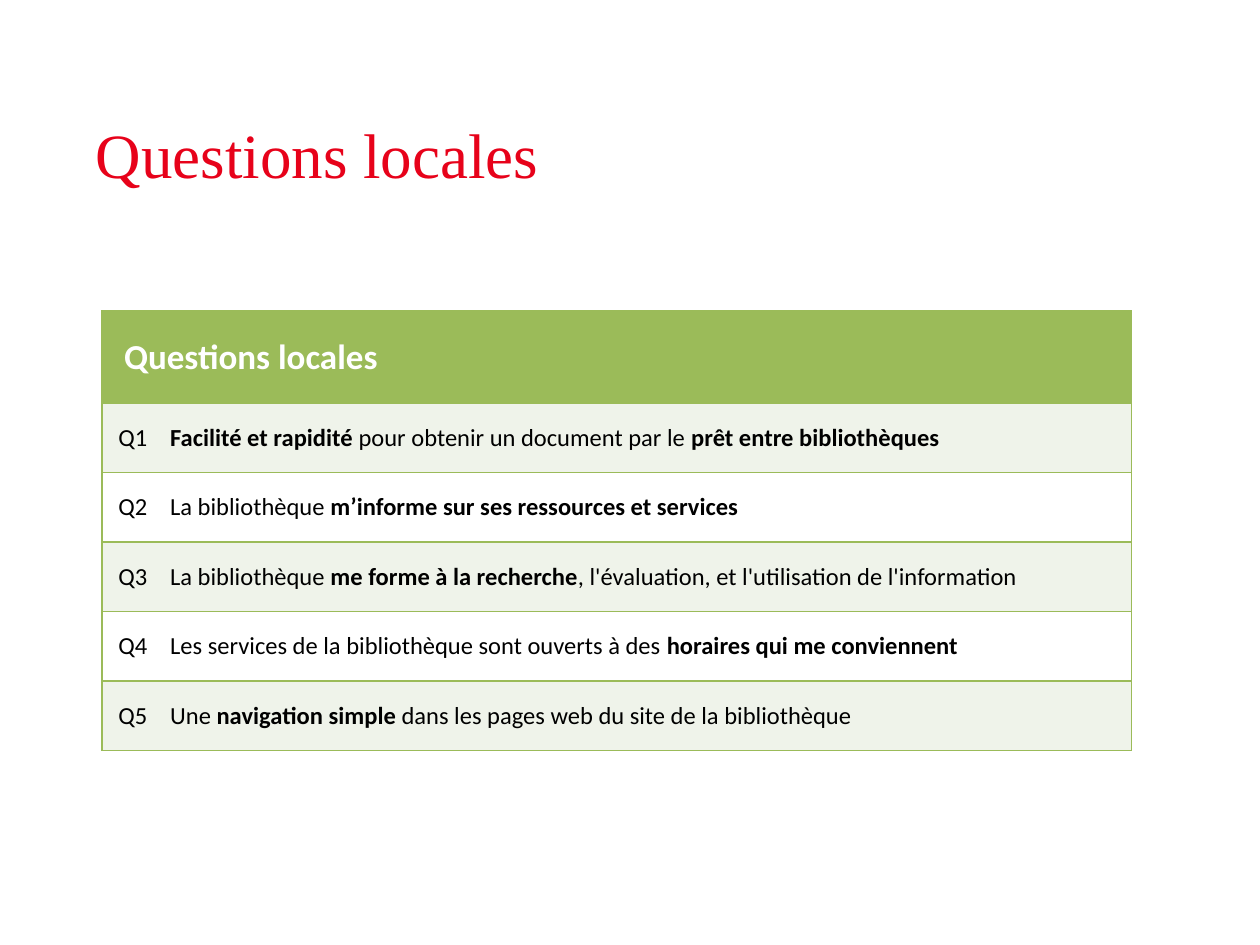
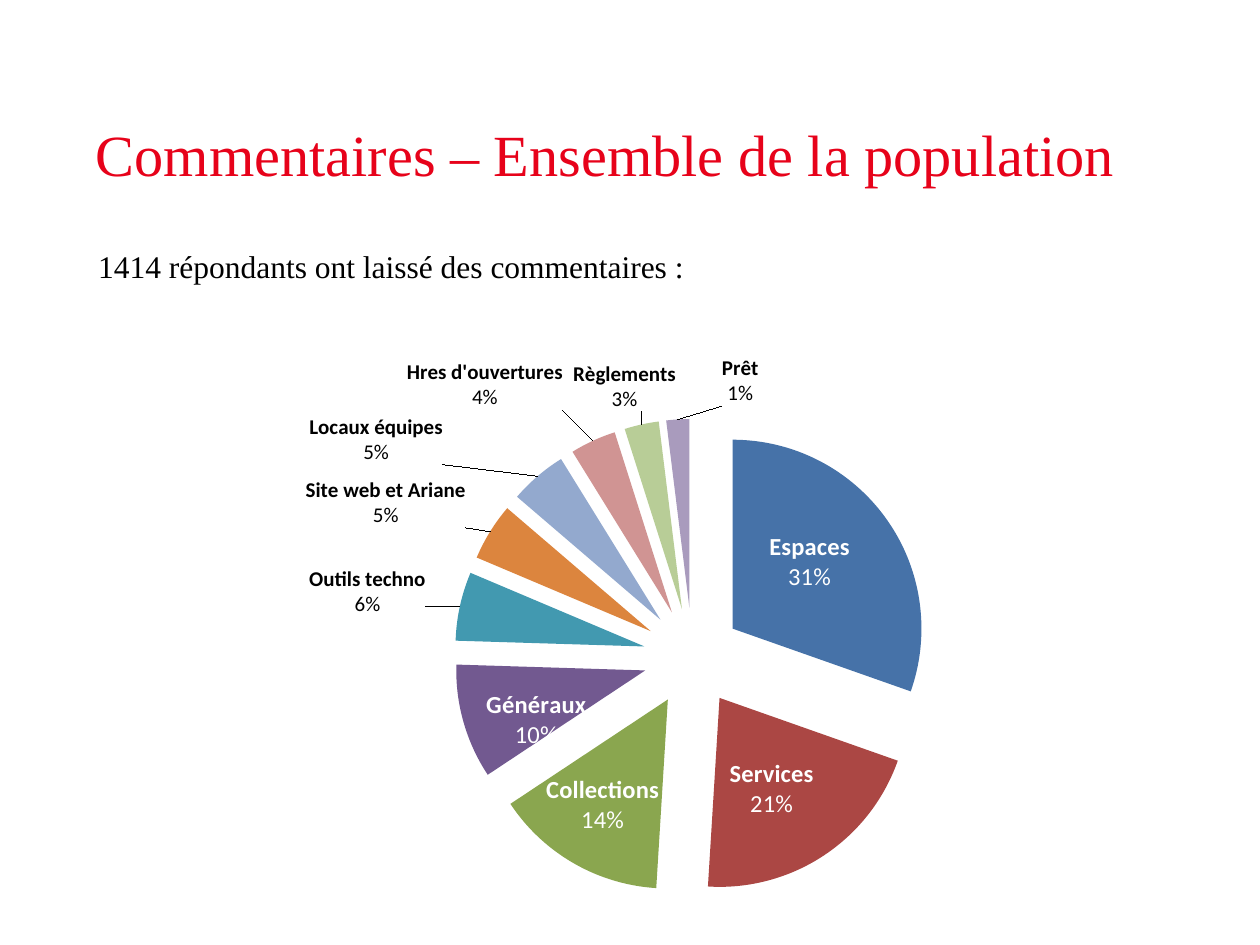
from lxml import etree
from pptx import Presentation
from pptx.chart.data import CategoryChartData
from pptx.dml.color import RGBColor
from pptx.enum.chart import XL_CHART_TYPE, XL_LABEL_POSITION
from pptx.enum.text import MSO_ANCHOR, MSO_AUTO_SIZE, PP_ALIGN
from pptx.oxml.ns import qn
from pptx.util import Cm, Pt

PIE = XL_CHART_TYPE.PIE
INSIDE, OUTSIDE = XL_LABEL_POSITION.CENTER, XL_LABEL_POSITION.OUTSIDE_END
MIDDLE, TOP = MSO_ANCHOR.MIDDLE, MSO_ANCHOR.TOP
LEFT, CENTER = PP_ALIGN.LEFT, PP_ALIGN.CENTER
NO_FIT = MSO_AUTO_SIZE.NONE

SERIF, SANS = "Times New Roman", "Calibri"
RED, GREEN, PALE, WHITE, BLACK = "E7021A", "9BBB59", "EFF3EA", "FFFFFF", "000000"
TITLE_BOX = (1.68, 2.08, 22.4, 2.39)
TABLE_BOX = (2.06, 6.27, 20.75, 8.86)
INTRO_BOX = (1.73, 4.85, 19, 1.5)
CHART_BOX = (4.09, 6.96, 18.11, 12.09)
CODE_WIDTH, HEADER_HEIGHT = 1.24, 1.86
EXPLOSION = 26
PLOT_LAYOUT = {"x": 0.28, "y": 0.12, "w": 0.53, "h": 0.8}

QUESTIONS = [
    [("Facilité et rapidité ", True), ("pour obtenir un document par le ", False),
     ("prêt entre bibliothèques", True)],
    [("La bibliothèque ", False), ("m’informe sur ses ressources et services", True)],
    [("La bibliothèque ", False), ("me forme à la recherche", True),
     (", l'évaluation, et l'utilisation de l'information", False)],
    [("Les services de la bibliothèque sont ouverts à des ", False),
     ("horaires qui me conviennent", True)],
    [("Une ", False), ("navigation simple ", True),
     ("dans les pages web du site de la bibliothèque", False)],
]

TOPICS = [
    ("Espaces", 31, "31%", "4672A8", INSIDE, (0, -0.02)),
    ("Services", 21, "21%", "AB4744", INSIDE, (0, 0.02)),
    ("Collections", 15, "14%", "8AA64F", INSIDE, (-0.02, 0.04)),
    ("Généraux", 10, "10%", "725990", INSIDE, (-0.02, 0.04)),
    ("Outils techno", 6, "6%", "4299B0", OUTSIDE, (-0.03, 0.02)),
    ("Site web et Ariane", 5, "5%", "DC853E", OUTSIDE, (-0.02, 0)),
    ("Locaux équipes", 5, "5%", "93A9CE", OUTSIDE, (-0.1, -0.01)),
    ("Hres d'ouvertures", 4, "4%", "D09493", OUTSIDE, (-0.03, -0.04)),
    ("Règlements", 3, "3%", "B8CD97", OUTSIDE, (0.04, -0.01)),
    ("Prêt", 2, "1%", "A99BBD", OUTSIDE, (0.07, -0.01)),
]


def paint(target, color):
    """Give a fill or a font a solid colour."""
    if hasattr(target, "solid"):
        target.solid()
        target.fore_color.rgb = RGBColor.from_string(color)
    else:
        target.color.rgb = RGBColor.from_string(color)


def assign(target, **values):
    """Set several attributes on one object."""
    for key, value in values.items():
        setattr(target, key, value)


def write(paragraph, pieces, size, font, color, align=LEFT):
    """Write (text, bold) pieces into a paragraph."""
    paragraph.alignment = align
    for text, bold in pieces:
        run = paragraph.add_run()
        run.text = text
        assign(run.font, size=Pt(size), name=font, bold=bold)
        paint(run.font, color)


def add_titled_slide(deck, title, size):
    """Add a title-only slide with the shared red title."""
    slide = deck.slides.add_slide(deck.slide_layouts[5])
    heading = slide.shapes.title
    left, top, width, height = map(Cm, TITLE_BOX)
    assign(heading, left=left, top=top, width=width, height=height)
    assign(heading.text_frame, word_wrap=True, auto_size=NO_FIT, vertical_anchor=MIDDLE,
           margin_bottom=Cm(0.5))
    write(heading.text_frame.paragraphs[0], [(title, False)], size, SERIF, RED)
    return slide


def style_cell(cell, color, lined_sides):
    """Fill a cell and rule the given sides, leaving the others bare."""
    properties = cell._tc.get_or_add_tcPr()
    for side in "LRTB":
        line = etree.SubElement(properties, qn(f"a:ln{side}"), w=str(Pt(1)))
        if side in lined_sides:
            fill = etree.SubElement(line, qn("a:solidFill"))
            etree.SubElement(fill, qn("a:srgbClr"), val=GREEN)
        else:
            etree.SubElement(line, qn("a:noFill"))
    paint(cell.fill, color)
    assign(cell, vertical_anchor=MIDDLE, margin_left=Cm(0.13), margin_right=Cm(0.13),
           margin_top=0, margin_bottom=0)


def add_question_table(slide, box):
    """Draw the header and the numbered questions in the box."""
    left, top, width, height = box
    table = slide.shapes.add_table(len(QUESTIONS) + 1, 2, *map(Cm, box)).table
    assign(table, first_row=False, horz_banding=False)
    table.columns[0].width = Cm(CODE_WIDTH)
    table.columns[1].width = Cm(width - CODE_WIDTH)
    table.rows[0].height = Cm(HEADER_HEIGHT)
    header = table.cell(0, 0)
    header.merge(table.cell(0, 1))
    for cell in table.rows[0].cells:
        style_cell(cell, GREEN, "LRTB")
    header.margin_left = Cm(0.44)
    write(header.text_frame.paragraphs[0], [("Questions locales", True)], 20, SANS, WHITE)
    for number, question in enumerate(QUESTIONS, 1):
        table.rows[number].height = Cm((height - HEADER_HEIGHT) / len(QUESTIONS))
        columns = (([(f"Q{number}", False)], CENTER, "LTB"), (question, LEFT, "RTB"))
        for column, (pieces, align, sides) in enumerate(columns):
            cell = table.cell(number, column)
            style_cell(cell, PALE if number % 2 else WHITE, sides)
            write(cell.text_frame.paragraphs[0], pieces, 14, SANS, BLACK, align)


def add_intro(slide, box):
    """Add the sentence above the chart."""
    frame = slide.shapes.add_textbox(*map(Cm, box)).text_frame
    assign(frame, word_wrap=True, vertical_anchor=TOP)
    write(frame.paragraphs[0], [("1414 répondants ont laissé des commentaires :", False)],
          18, SERIF, BLACK)
    frame.paragraphs[0].space_after = Pt(6)


def make_layout(values, inner=False):
    """Build a manual chart layout from fractions of the chart."""
    layout = etree.Element(qn("c:layout"))
    manual = etree.SubElement(layout, qn("c:manualLayout"))
    if inner:
        settings = {"layoutTarget": "inner", "xMode": "edge", "yMode": "edge", **values}
    else:
        settings = values
    for tag, value in settings.items():
        etree.SubElement(manual, qn(f"c:{tag}"), val=str(value))
    return layout


def add_comment_pie(slide, box):
    """Draw the exploded pie of comment topics in the box."""
    data = CategoryChartData()
    data.categories = [topic[0] for topic in TOPICS]
    data.add_series("Series 1", [topic[1] for topic in TOPICS])
    chart = slide.shapes.add_chart(PIE, *map(Cm, box), data).chart
    assign(chart, has_legend=False, has_title=False)
    assign(chart.font, name=SANS, size=Pt(12))
    paint(chart.font, BLACK)
    plot_area = chart._chartSpace.chart.plotArea
    for old_layout in plot_area.findall(qn("c:layout")):
        plot_area.remove(old_layout)
    plot_area.insert(0, make_layout(PLOT_LAYOUT, inner=True))
    series = chart.plots[0].series[0]
    explosion = etree.Element(qn("c:explosion"), val=str(EXPLOSION))
    series._element.find(qn("c:tx")).addnext(explosion)
    for index, (name, _, share, color, position, _) in enumerate(TOPICS):
        point = series.points[index]
        paint(point.format.fill, color)
        point_element = series._element.findall(qn("c:dPt"))[index]
        point_explosion = etree.Element(qn("c:explosion"), val=str(EXPLOSION))
        point_element.find(qn("c:spPr")).addprevious(point_explosion)
        label = point.data_label
        size, ink = (14, WHITE) if position == INSIDE else (12, BLACK)
        frame = label.text_frame
        write(frame.paragraphs[0], [(name, True)], size, SANS, ink, CENTER)
        write(frame.add_paragraph(), [(share, False)], size, SANS, ink, CENTER)
        label.position = position
    for label_element, topic in zip(series._element.iter(qn("c:dLbl")), TOPICS):
        offset = dict(zip("xy", topic[5]))
        label_element.find(qn("c:idx")).addnext(make_layout(offset))


def main():
    """Build and save both slides."""
    deck = Presentation()
    assign(deck, slide_width=Cm(25.4), slide_height=Cm(19.05))
    add_question_table(add_titled_slide(deck, "Questions locales", 36), TABLE_BOX)
    comments = add_titled_slide(deck, "Commentaires – Ensemble de la population", 33.3)
    add_intro(comments, INTRO_BOX)
    add_comment_pie(comments, CHART_BOX)
    deck.save("out.pptx")


if __name__ == "__main__":
    main()
